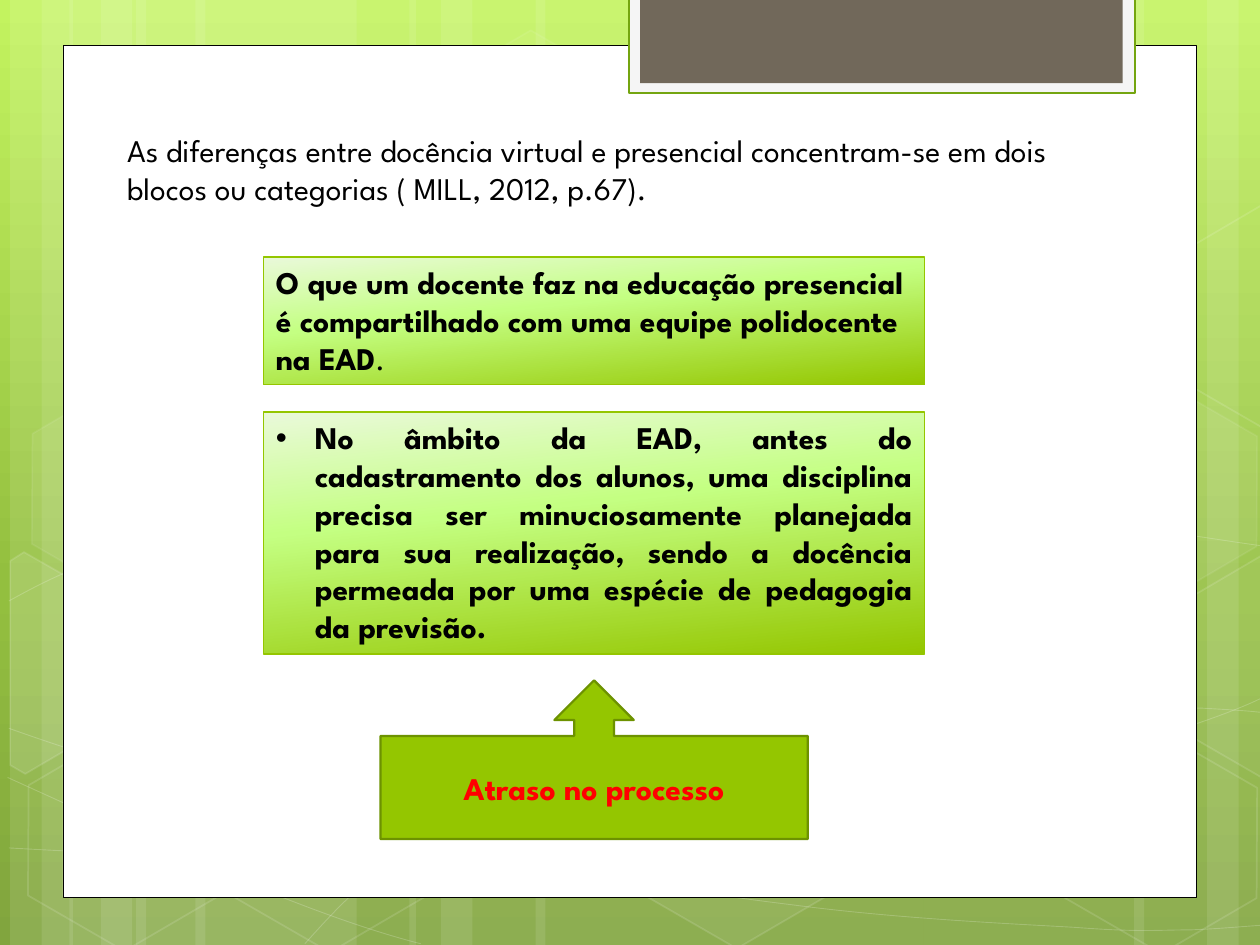
from math import cos, radians, sin

from lxml.etree import SubElement
from pptx import Presentation
from pptx.dml.color import RGBColor
from pptx.enum.shapes import MSO_SHAPE
from pptx.enum.text import MSO_ANCHOR, MSO_AUTO_SIZE, PP_ALIGN
from pptx.oxml.ns import qn
from pptx.util import Inches, Pt

COLUMNS, ROWS = 10, 7.5
FONT = "League Spartan"
TILT = 30
COLORS = {
    "white": "FFFFFF", "black": "000000", "red": "FF0000",
    "green": "94C600", "dark_green": "6D9200", "tab_line": "74A510",
    "tab_frame": "F5F5F5", "tab": "71685A",
}
BACKGROUND_STOPS = [(0, "C3F35F"), (62, "93BF3F"), (100, "81A53E")]
CARD_STOPS = [(0, "EAF9DA"), (40, "C4FF82"), (100, "94C600")]

INTRO = ("As diferenças entre docência virtual e presencial concentram-se em dois "
         "blocos ou categorias ( MILL, 2012, p.67).")
SHARED = [("O que um docente faz na educação presencial é compartilhado com uma "
           "equipe polidocente na EAD", True), (".", False)]
PLANNING = ("No âmbito da EAD, antes do cadastramento dos alunos, uma disciplina "
            "precisa ser minuciosamente planejada para sua realização, sendo a docência "
            "permeada por uma espécie de pedagogia da previsão.")
DELAY = "Atraso no processo"

STRIP_GROUPS = [(0.08, 1.75, False), (0.55, 1.75, False),
                (0.08, 1.75, True), (3.25, 3.08, False)]
WAVES = [
    [(0.07, 6.73), (0.61, 6.76), (1.15, 6.79), (1.9, 6.78), (2.65, 6.77), (3.58, 6.75),
     (4.58, 6.65), (5.58, 6.55), (7, 6.36), (7.92, 6.17), (8.83, 5.98), (9.77, 5.68),
     (10.07, 5.51)],
    [(0.07, 4.77), (0.36, 4.61), (0.65, 4.46), (1.21, 4.31), (1.78, 4.16), (2.59, 3.94),
     (3.47, 3.87), (4.36, 3.8), (5.44, 3.79), (6.54, 3.87), (7.64, 3.95), (9.47, 4.26),
     (10.07, 4.34)],
    [(0.06, 6.17), (1.27, 6.72), (2.47, 7.27), (3.34, 7.49)],
    [(0.07, 5.78), (0.38, 5.89), (0.7, 6), (1.28, 6.16), (1.86, 6.31), (2.73, 6.56),
     (3.57, 6.73), (4.4, 6.9), (5.45, 7.08), (6.28, 7.18), (7.11, 7.29), (8, 7.33),
     (8.53, 7.36), (9.05, 7.4), (9.19, 7.38), (9.45, 7.38), (9.71, 7.37), (9.89, 7.35),
     (10.07, 7.34)],
    [(2.42, 7.49), (2.6, 7.29), (2.78, 7.09), (3.02, 6.91), (3.26, 6.73), (3.6, 6.53),
     (3.88, 6.39), (4.16, 6.25), (4.33, 6.19), (4.7, 6.09), (5.06, 5.99), (5.73, 5.85),
     (6.08, 5.78), (6.44, 5.71), (6.49, 5.71), (6.8, 5.69), (7.11, 5.66), (7.6, 5.63),
     (7.94, 5.62), (8.29, 5.61), (8.86, 5.62), (8.86, 5.62), (9.08, 5.62), (9.31, 5.62),
     (9.53, 5.62), (9.71, 5.63), (9.88, 5.64), (9.97, 5.65), (10.06, 5.66), (10.03, 5.65),
     (10.06, 5.66)],
]
HEXAGONS = [
    (3.34, 0.36, 4, 8), (4.97, 5.89, 6, 12), (0.11, 5.91, 0, 12),
    (0.14, 3.12, 7, 8), (1.74, 5.92, 0, 12), (7.53, 4.53, 10, 12),
    (8.34, 5.93, 0, 12), (8.34, 3.14, 7, 8),
]
RIGHT_HEXAGON = [(9.26, 4.85), (10.01, 4.41), (10.09, 4.46), (10.09, 6.13),
                 (10.02, 6.17), (9.26, 5.73)]
CUT_HEXAGONS = [
    ([(0.08, 4.45), (0.19, 4.38), (0.96, 4.82), (0.95, 5.7), (0.2, 6.14), (0.08, 6.07)],
     (0.36, 5.35), 10),
    (RIGHT_HEXAGON, (9.85, 5.2), 4),
    ([(x, y - 2.78) for x, y in RIGHT_HEXAGON], (9.85, 2.42), 0),
]

presentation = Presentation()
presentation.slide_width, presentation.slide_height = Inches(COLUMNS), Inches(ROWS)
slide = presentation.slides.add_slide(presentation.slide_layouts[6])
column = presentation.slide_width / COLUMNS
row = presentation.slide_height / ROWS


def cell(left, top, width, height):
    return [round(value) for value in (left * column, top * row, width * column, height * row)]


def set_alpha(parent, percent):
    color = parent.find(qn("a:solidFill")).find(qn("a:srgbClr"))
    SubElement(color, qn("a:alpha"), val=str(percent * 1000))


def set_gradient(parent, stops, angle):
    gradient = parent.makeelement(qn("a:gradFill"), {"rotWithShape": "1"})
    stop_list = SubElement(gradient, qn("a:gsLst"))
    for position, color in stops:
        stop = SubElement(stop_list, qn("a:gs"), pos=str(position * 1000))
        SubElement(stop, qn("a:srgbClr"), val=color)
    SubElement(gradient, qn("a:lin"), ang=str(angle * 60000), scaled="0")
    parent.replace(parent.find(qn("a:solidFill")), gradient)


def paint(shape, fill=None, line=None, width=1, fill_alpha=100, line_alpha=100):
    shape.shadow.inherit = False
    properties = shape._element.spPr
    if fill and fill_alpha:
        shape.fill.solid()
        shape.fill.fore_color.rgb = RGBColor.from_string(COLORS[fill])
        if fill_alpha < 100:
            set_alpha(properties, fill_alpha)
    else:
        shape.fill.background()
    if line:
        shape.line.color.rgb = RGBColor.from_string(COLORS[line])
        shape.line.width = Pt(width)
        if line_alpha < 100:
            set_alpha(properties.find(qn("a:ln")), line_alpha)
    else:
        shape.line.fill.background()


def add_block(box, kind=MSO_SHAPE.RECTANGLE, **style):
    shape = slide.shapes.add_shape(kind, *cell(*box))
    paint(shape, **style)
    return shape


def add_outline(points, close, **style):
    points = [(round(x * column), round(y * row)) for x, y in points]
    builder = slide.shapes.build_freeform(*points[0])
    builder.add_line_segments(points[1:], close=close)
    shape = builder.convert_to_shape()
    paint(shape, **style)
    return shape


def bend(shape):
    lines = list(shape._element.iter(qn("a:lnTo")))
    outline = lines[0].getparent()
    for start in range(0, len(lines), 3):
        curve = SubElement(outline, qn("a:cubicBezTo"))
        for line in lines[start:start + 3]:
            curve.append(line.find(qn("a:pt")))
            outline.remove(line)


def untilt(point, center):
    x, y = point[0] - center[0], point[1] - center[1]
    cosine, sine = cos(radians(TILT)), sin(radians(TILT))
    return center[0] + x * cosine + y * sine, center[1] - x * sine + y * cosine


def write(shape, text, color="black", bold=False, align=PP_ALIGN.LEFT,
          anchor=MSO_ANCHOR.TOP, bullet=None, grow=True):
    frame = shape.text_frame
    frame.word_wrap = True
    frame.vertical_anchor = anchor
    if grow:
        frame.auto_size = MSO_AUTO_SIZE.SHAPE_TO_FIT_TEXT
    paragraph = frame.paragraphs[0]
    paragraph.alignment = align
    for part, part_bold in [(text, bold)] if isinstance(text, str) else text:
        run = paragraph.add_run()
        run.text = part
        run.font.name, run.font.size, run.font.bold = FONT, Pt(18), part_bold
        run.font.color.rgb = RGBColor.from_string(COLORS[color])
    if bullet:
        properties = paragraph._p.get_or_add_pPr()
        properties.set("marL", str(Inches(0.31)))
        properties.set("indent", str(-Inches(0.31)))
        SubElement(properties, qn("a:buFont"), typeface="Arial")
        SubElement(properties, qn("a:buChar"), char=bullet)


slide.background.fill.solid()
set_gradient(slide.background._cSld.bg.bgPr, BACKGROUND_STOPS, 90)

for origin, wide, mirrored in STRIP_GROUPS:
    for offset, width in [(1, wide), (0, 0.5), (0.25, 0.83)]:
        left = COLUMNS + origin - offset - width if mirrored else origin + offset
        strip = add_block((left, 0, width, ROWS), fill="white", fill_alpha=10)
        strip.rotation = 180 if mirrored else 0
for wave in WAVES:
    bend(add_outline(wave, False, line="white", width=0.5, line_alpha=20))
for left, top, fill_alpha, line_alpha in HEXAGONS:
    hexagon = add_block((left, top, 1.75, 1.52), MSO_SHAPE.HEXAGON, fill="white",
                        line="white", fill_alpha=fill_alpha, line_alpha=line_alpha)
    hexagon.adjustments[0] = 0.285
    hexagon.rotation = TILT
for points, center, fill_alpha in CUT_HEXAGONS:
    hexagon = add_outline([untilt(point, center) for point in points], True, fill="white",
                          line="white", fill_alpha=fill_alpha, line_alpha=12)
    hexagon.rotation = TILT

add_block((0.5, 0.36, 9, 6.76), fill="white", line="black", width=0.5)
add_block((4.99, -0.02, 4.02, 0.76), fill="tab_frame", line="tab_line", width=1.25)
add_block((5.08, -0.02, 3.83, 0.68), fill="tab")

write(slide.shapes.add_textbox(*cell(0.91, 0.99, 7.95, 1.31)), INTRO)
for top, height, text, style in [
    (2.04, 1.01, SHARED, {}),
    (3.27, 1.92, PLANNING, {"bold": True, "align": PP_ALIGN.JUSTIFY, "bullet": "•"}),
]:
    card = add_block((2.09, top, 5.25, height), fill="green", line="green", width=0.75)
    set_gradient(card._element.spPr, CARD_STOPS, 84)
    write(card, text, **style)
callout = add_block((3.02, 5.4, 3.39, 1.26), MSO_SHAPE.UP_ARROW_CALLOUT,
                    fill="green", line="dark_green", width=1.25)
write(callout, DELAY, color="red", bold=True, align=PP_ALIGN.CENTER,
      anchor=MSO_ANCHOR.MIDDLE, grow=False)

presentation.save("out.pptx")
